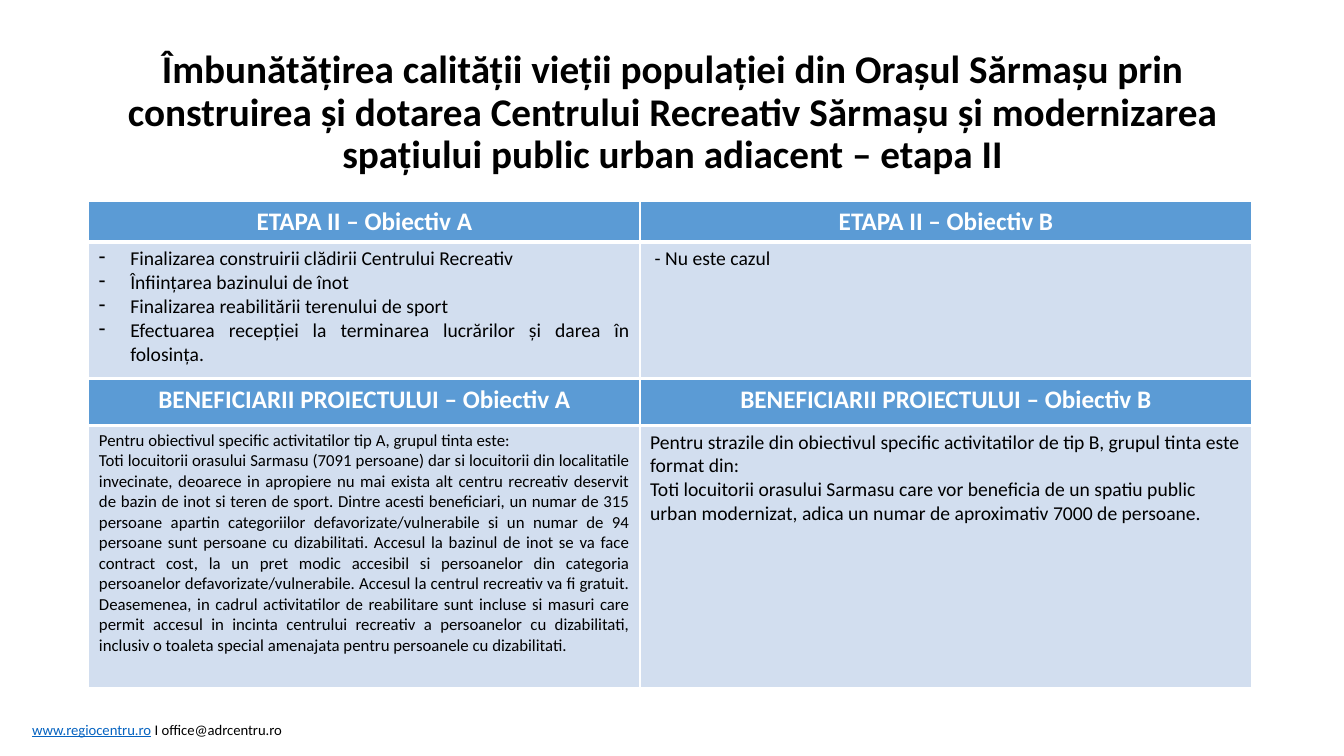
"""Build the slide on stage II of the Sărmașu recreation centre project."""
import pptx
import pptx.util
import pptx.dml.color
import pptx.enum.text
import lxml.etree
from dataclasses import dataclass
from pptx.util import Cm


@dataclass(frozen=True)
class Theme:
    font: str = "Calibri"
    ink: str = "000000"
    white: str = "FFFFFF"
    head: str = "5B9BD5"
    body: str = "D2DEEF"
    link: str = "0563C1"
    title: float = 28
    label: float = 18
    text: float = 14
    small: float = 12
    foot: float = 10.5


theme = Theme()
align = pptx.enum.text.PP_ALIGN
rgb = pptx.dml.color.RGBColor.from_string


def style(para, size, color, bold=False, side=align.LEFT):
    para.alignment = side
    for run in para.runs:
        run.font.name = theme.font
        run.font.size = pptx.util.Pt(size)
        run.font.bold = bold
        run.font.color.rgb = rgb(color)


def border(cell, tops, bottom):
    props = cell._tc.get_or_add_tcPr()
    for edge, width in (("lnL", 1), ("lnR", 1), ("lnT", tops), ("lnB", bottom)):
        line = lxml.etree.SubElement(props, pptx.oxml.ns.qn("a:" + edge), w=str(width * 12700))
        fill = lxml.etree.SubElement(line, pptx.oxml.ns.qn("a:solidFill"))
        lxml.etree.SubElement(fill, pptx.oxml.ns.qn("a:srgbClr"), val=theme.white)


deck = pptx.Presentation()
deck.slide_width, deck.slide_height = Cm(33.87), Cm(19.05)
slide = deck.slides.add_slide(deck.slide_layouts[6])

foot = slide.shapes.add_textbox(Cm(0.56), Cm(18.03), Cm(7.06), Cm(0.71)).text_frame
foot.word_wrap = True
para = foot.paragraphs[0]
for words in ("www.regiocentru.ro", " I office@adrcentru.ro"):
    para.add_run().text = words
style(para, theme.foot, theme.ink)
para.runs[0].font.color.rgb = rgb(theme.link)
para.runs[0].font.underline = True

title = slide.shapes.add_textbox(Cm(2.34), Cm(1.02), Cm(29.21), Cm(3.68)).text_frame
title.word_wrap = True
title.vertical_anchor = pptx.enum.text.MSO_ANCHOR.MIDDLE
title.text = ("Îmbunătățirea calității vieții populației din Orașul Sărmașu prin "
              "construirea și dotarea Centrului Recreativ Sărmașu și modernizarea "
              "spațiului public urban adiacent – etapa II")
title.paragraphs[0].line_spacing = 0.9
style(title.paragraphs[0], theme.title, theme.ink, True, align.CENTER)

works = [
    "Finalizarea construirii clădirii Centrului Recreativ",
    "Înființarea bazinului de înot",
    "Finalizarea reabilitării terenului de sport",
    "Efectuarea recepției la terminarea lucrărilor și darea în folosința.",
]
group_a = [
    "Pentru obiectivul specific activitatilor tip A, grupul tinta este:",
    "Toti locuitorii orasului Sarmasu (7091 persoane) dar si locuitorii din "
    "localitatile invecinate, deoarece in apropiere nu mai exista alt centru recreativ "
    "deservit de bazin de inot si teren de sport. Dintre acesti beneficiari, un numar "
    "de 315 persoane apartin categoriilor defavorizate/vulnerabile si un numar de "
    "94 persoane sunt persoane cu dizabilitati. Accesul la bazinul de inot se va face "
    "contract cost, la un pret modic accesibil si persoanelor din categoria "
    "persoanelor defavorizate/vulnerabile. Accesul la centrul recreativ va fi gratuit. "
    "Deasemenea, in cadrul activitatilor de reabilitare sunt incluse si masuri care "
    "permit accesul in incinta centrului recreativ a persoanelor cu dizabilitati, "
    "inclusiv o toaleta special amenajata pentru persoanele cu dizabilitati.",
]
group_b = [
    "Pentru strazile din obiectivul specific activitatilor de tip B, grupul tinta este "
    "format din:",
    "Toti locuitorii orasului Sarmasu care vor beneficia de un spatiu public "
    "urban modernizat, adica un numar de aproximativ 7000 de persoane.",
]
tables = [
    (5.08, (1, 3.43), "ETAPA II", (works, ["- Nu este cazul"]), theme.text),
    (9.55, (1.17, 6.6), "BENEFICIARII PROIECTULUI", (group_a, group_b), theme.small),
]
widths = (13.89, 15.42)

for top, heights, name, texts, size in tables:
    table = slide.shapes.add_table(2, 2, Cm(2.24), Cm(top), Cm(sum(widths)), Cm(sum(heights))).table
    for row, height in zip(table.rows, heights):
        row.height = Cm(height)
    for col, letter in enumerate("AB"):
        table.columns[col].width = Cm(widths[col])
        head, body = table.cell(0, col), table.cell(1, col)
        for cell, edges, color in ((head, (1, 3), theme.head), (body, (3, 1), theme.body)):
            border(cell, *edges)
            cell.fill.solid()
            cell.fill.fore_color.rgb = rgb(color)
        head.text_frame.text = f"{name} – Obiectiv {letter}"
        style(head.text_frame.paragraphs[0], theme.label, theme.white, True, align.CENTER)
        body.text_frame.text = "\n".join(texts[col])
        for para in body.text_frame.paragraphs:
            if texts[col] is works:
                props = para._p.get_or_add_pPr()
                props.set("marL", str(Cm(0.79)))
                props.set("indent", str(-Cm(0.79)))
                lxml.etree.SubElement(props, pptx.oxml.ns.qn("a:buFontTx"))
                lxml.etree.SubElement(props, pptx.oxml.ns.qn("a:buChar"), char="-")
            if letter == "A":
                style(para, size, theme.ink, side=align.JUSTIFY)
            else:
                style(para, theme.text, theme.ink)
        if len(texts[col]) == 1:
            body.margin_left = Cm(0.37)

deck.save("out.pptx")
